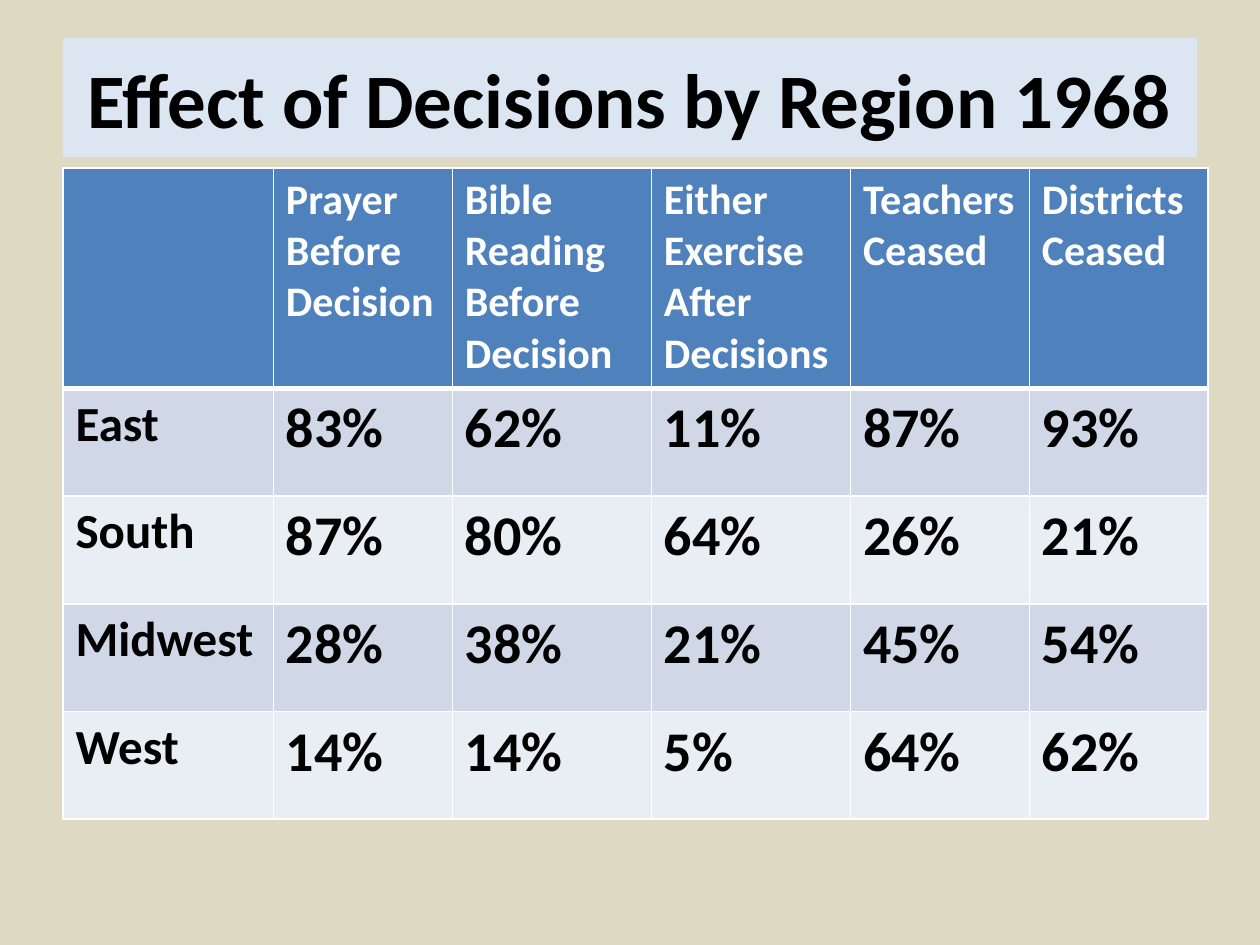
from lxml.etree import SubElement
from pptx import Presentation
from pptx.dml.color import RGBColor
from pptx.enum.shapes import MSO_SHAPE
from pptx.enum.text import MSO_ANCHOR, PP_ALIGN
from pptx.oxml.ns import qn
from pptx.util import Inches, Pt

WIDTH, HEIGHT = Inches(10), Inches(7.5)
LEFT = 0.05
COLUMN_SHARES = [0.167, 0.142, 0.158, 0.158, 0.142, 0.142]
HEADER_SHARE, BODY_SHARE = 0.233, 0.114
HEADER_FILL, BAND_FILLS = "4F81BD", ["D0D8E8", "E9EDF4"]
BLACK, WHITE = "000000", "FFFFFF"
ROWS = [
    ["", "Prayer Before Decision", "Bible Reading Before Decision",
     "Either Exercise\nAfter Decisions", "Teachers\nCeased", "Districts Ceased"],
    ["East", "83%", "62%", "11%", "87%", "93%"],
    ["South", "87%", "80%", "64%", "26%", "21%"],
    ["Midwest", "28%", "38%", "21%", "45%", "54%"],
    ["West", "14%", "14%", "5%", "64%", "62%"],
]


def across(share):
    return int(WIDTH * share)


def down(share):
    return int(HEIGHT * share)


def paint(fill, color):
    fill.solid()
    fill.fore_color.rgb = RGBColor.from_string(color)


def write(tf, text, size, color, align=PP_ALIGN.LEFT):
    tf.text = text
    for p in tf.paragraphs:
        p.alignment = align
        for r in p.runs:
            r.font.name = "Calibri"
            r.font.size = Pt(size)
            r.font.bold = True
            r.font.color.rgb = RGBColor.from_string(color)


def add_title(s, text):
    sp = s.shapes.add_shape(MSO_SHAPE.RECTANGLE, across(LEFT), down(0.04),
                            across(0.9), down(0.126))
    sp.shadow.inherit = False
    paint(sp.fill, "DCE6F2")
    sp.line.fill.background()
    tf = sp.text_frame
    tf.word_wrap = True
    tf.vertical_anchor = MSO_ANCHOR.MIDDLE
    write(tf, text, 44, BLACK, PP_ALIGN.CENTER)


def add_borders(cell, bottom):
    tc_pr = cell._tc.get_or_add_tcPr()
    for side, points in [("L", 1), ("R", 1), ("T", 1), ("B", bottom)]:
        line = SubElement(tc_pr, qn(f"a:ln{side}"), w=str(Pt(points)))
        solid = SubElement(line, qn("a:solidFill"))
        SubElement(solid, qn("a:srgbClr"), val=WHITE)


def fill_cell(cell, text, row, column):
    add_borders(cell, 1 if row else 3)
    if row == 0:
        paint(cell.fill, HEADER_FILL)
        write(cell.text_frame, text, 24, WHITE)
    else:
        paint(cell.fill, BAND_FILLS[(row - 1) % 2])
        write(cell.text_frame, text, 32 if column else 28, BLACK)


def add_region_table(s, rows):
    row_shares = [HEADER_SHARE] + [BODY_SHARE] * (len(rows) - 1)
    table = s.shapes.add_table(len(rows), len(COLUMN_SHARES), across(LEFT), down(0.178),
                               across(sum(COLUMN_SHARES)), down(sum(row_shares))).table
    for column, share in zip(table.columns, COLUMN_SHARES):
        column.width = across(share)
    for i, (share, texts) in enumerate(zip(row_shares, rows)):
        table.rows[i].height = down(share)
        for j, text in enumerate(texts):
            fill_cell(table.cell(i, j), text, i, j)


def main():
    prs = Presentation()
    prs.slide_width, prs.slide_height = WIDTH, HEIGHT
    s = prs.slides.add_slide(prs.slide_layouts[6])
    paint(s.background.fill, "DDD9C3")
    add_title(s, "Effect of Decisions by Region 1968")
    add_region_table(s, ROWS)
    prs.save("out.pptx")


if __name__ == "__main__":
    main()
